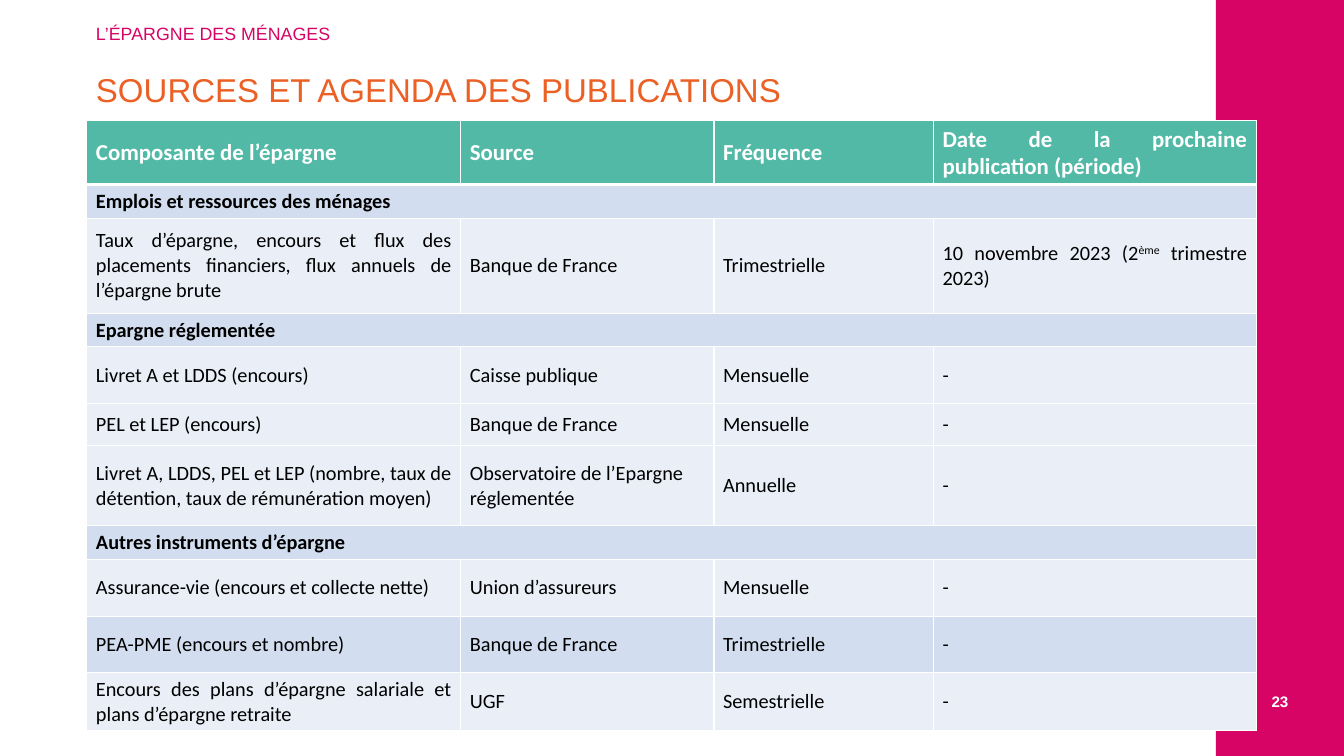
"""Build the slide listing the sources and release dates of household savings data."""
from dataclasses import dataclass

from lxml import etree
from pptx import Presentation
from pptx.dml.color import RGBColor
from pptx.enum.shapes import MSO_SHAPE
from pptx.enum.text import MSO_ANCHOR, MSO_AUTO_SIZE, PP_ALIGN
from pptx.oxml.ns import qn
from pptx.util import Inches, Pt

RECT = MSO_SHAPE.RECTANGLE
MIDDLE = MSO_ANCHOR.MIDDLE
NO_FIT = MSO_AUTO_SIZE.NONE
LEFT, CENTER, JUSTIFY = PP_ALIGN.LEFT, PP_ALIGN.CENTER, PP_ALIGN.JUSTIFY


@dataclass(frozen=True)
class Theme:
    pink: str = "D70365"
    orange: str = "EB6025"
    green: str = "52B9A6"
    band: str = "D2DEEF"
    pale: str = "EAEFF7"
    white: str = "FFFFFF"
    black: str = "000000"
    sans: str = "Arial"
    grid: str = "Calibri"
    small: int = 12
    label: int = 14
    cell: int = 16
    head: int = 18
    title: int = 26


WIDTHS = (4.09, 2.77, 2.4, 3.53)
HEADS = ("Composante de l’épargne", "Source", "Fréquence",
         "Date de la prochaine publication (période)")
ROWS = (
    (0.36, "Emplois et ressources des ménages"),
    (1.04, "Taux d’épargne, encours et flux des placements financiers, "
           "flux annuels de l’épargne brute", "Banque de France", "Trimestrielle",
     ("10 novembre 2023 (2", "ème", " trimestre 2023)")),
    (0.36, "Epargne réglementée"),
    (0.62, "Livret A et LDDS (encours)", "Caisse publique", "Mensuelle", "-"),
    (0.46, "PEL et LEP (encours)", "Banque de France", "Mensuelle", "-"),
    (0.88, "Livret A, LDDS, PEL et LEP (nombre, taux de détention, "
           "taux de rémunération moyen)",
     "Observatoire de l’Epargne réglementée", "Annuelle", "-"),
    (0.36, "Autres instruments d’épargne"),
    (0.62, "Assurance-vie (encours et collecte nette)", "Union d’assureurs",
     "Mensuelle", "-"),
    (0.62, "PEA-PME (encours et nombre)", "Banque de France", "Trimestrielle", "-"),
    (0.62, "Encours des plans d’épargne salariale et plans d’épargne retraite",
     "UGF", "Semestrielle", "-"),
)
SHADED = "PEA-PME (encours et nombre)"


def write(frame, text, *, font, size, color, bold=False, align=LEFT, line=1.0):
    """Fill a text frame; in a tuple every second piece is raised."""
    para = frame.paragraphs[0]
    props = para._p.get_or_add_pPr()
    props.set("marL", "0")
    props.set("indent", "0")
    etree.SubElement(props, qn("a:buNone"))
    para.alignment = align
    para.line_spacing = line
    para.space_before = Pt(0)
    for i, piece in enumerate((text,) if isinstance(text, str) else text):
        run = para.add_run()
        run.text = piece
        run.font.name = font
        run.font.size = Pt(size)
        run.font.bold = bold
        run.font.color.rgb = RGBColor.from_string(color)
        if i % 2:
            run._r.get_or_add_rPr().set("baseline", "30000")


class Deck:
    """Hold the theme and the current slide."""

    def __init__(self, theme, slide):
        self.theme = theme
        self.slide = slide

    def holder(self, shape, box, text, **style):
        """Move a placeholder and fill it."""
        shape.left, shape.top, shape.width, shape.height = map(Inches, box)
        frame = shape.text_frame
        frame.word_wrap = True
        frame.auto_size = NO_FIT
        frame.vertical_anchor = MIDDLE
        write(frame, text, font=self.theme.sans, line=0.9, **style)

    def bar(self, box, color):
        """Draw a plain filled bar."""
        shape = self.slide.shapes.add_shape(RECT, *map(Inches, box))
        shape.shadow.inherit = False
        shape.fill.solid()
        shape.fill.fore_color.rgb = RGBColor.from_string(color)
        shape.line.fill.background()

    def label(self, box, text, **style):
        """Add a text box centred on its height."""
        frame = self.slide.shapes.add_textbox(*map(Inches, box)).text_frame
        frame.word_wrap = True
        frame.vertical_anchor = MIDDLE
        write(frame, text, font=self.theme.sans, **style)

    def edge(self, cell, side, width):
        """Draw one white border of a cell."""
        line = etree.SubElement(cell._tc.get_or_add_tcPr(), qn(f"a:ln{side}"),
                                w=str(Pt(width)))
        fill = etree.SubElement(line, qn("a:solidFill"))
        etree.SubElement(fill, qn("a:srgbClr"), val=self.theme.white)

    def cell(self, cell, text, fill, row, **style):
        """Format one table cell."""
        widths = {"L": 1, "R": 1, "T": 3 if row == 1 else 1, "B": 1 if row else 3}
        for side, width in widths.items():
            self.edge(cell, side, width)
        cell.fill.solid()
        cell.fill.fore_color.rgb = RGBColor.from_string(fill)
        cell.vertical_anchor = MIDDLE
        if text:
            write(cell.text_frame, text, font=self.theme.grid, **style)

    def table(self, left, top, widths, heads, rows):
        """Add the table; a row with one text spans all columns."""
        look = self.theme
        rows = ((0.69, *heads), *rows)
        size = (sum(widths), sum(row[0] for row in rows))
        table = self.slide.shapes.add_table(
            len(rows), len(widths), *map(Inches, (left, top, *size))).table
        table.first_row = table.horz_banding = False
        for col, width in zip(table.columns, widths):
            col.width = Inches(width)
        for r, (height, *texts) in enumerate(rows):
            table.rows[r].height = Inches(height)
            group = len(texts) == 1
            if group:
                table.cell(r, 0).merge(table.cell(r, len(widths) - 1))
                texts += [""] * (len(widths) - 1)
            fill = look.band if group or texts[0] == SHADED else look.pale
            for c, text in enumerate(texts):
                self.cell(table.cell(r, c), text, fill if r else look.green, r,
                          size=look.cell if r else look.head,
                          color=look.black if r else look.white,
                          bold=group or r == 0,
                          align=LEFT if c == 1 else JUSTIFY)


def main():
    """Compose the slide and save it."""
    deck = Presentation()
    deck.slide_width, deck.slide_height = Inches(14.7), Inches(8.27)
    slide = deck.slides.add_slide(deck.slide_layouts[1])
    look = Theme()
    page = Deck(look, slide)
    page.bar((13.3, 0, 1.4, 8.27), look.pink)
    page.label((13.3, 7.41, 1.4, 0.53), "23", size=look.small,
               color=look.white, bold=True, align=CENTER)
    page.holder(slide.placeholders[1], (0.95, 0.24, 4.98, 0.29),
                "L’ÉPARGNE DES MÉNAGES", size=look.label, color=look.pink)
    page.holder(slide.shapes.title, (0.95, 0.76, 11.99, 0.48),
                "SOURCES ET AGENDA DES PUBLICATIONS", size=look.title,
                color=look.orange, align=JUSTIFY)
    page.table(0.95, 1.32, WIDTHS, HEADS, ROWS)
    deck.save("out.pptx")


if __name__ == "__main__":
    main()
